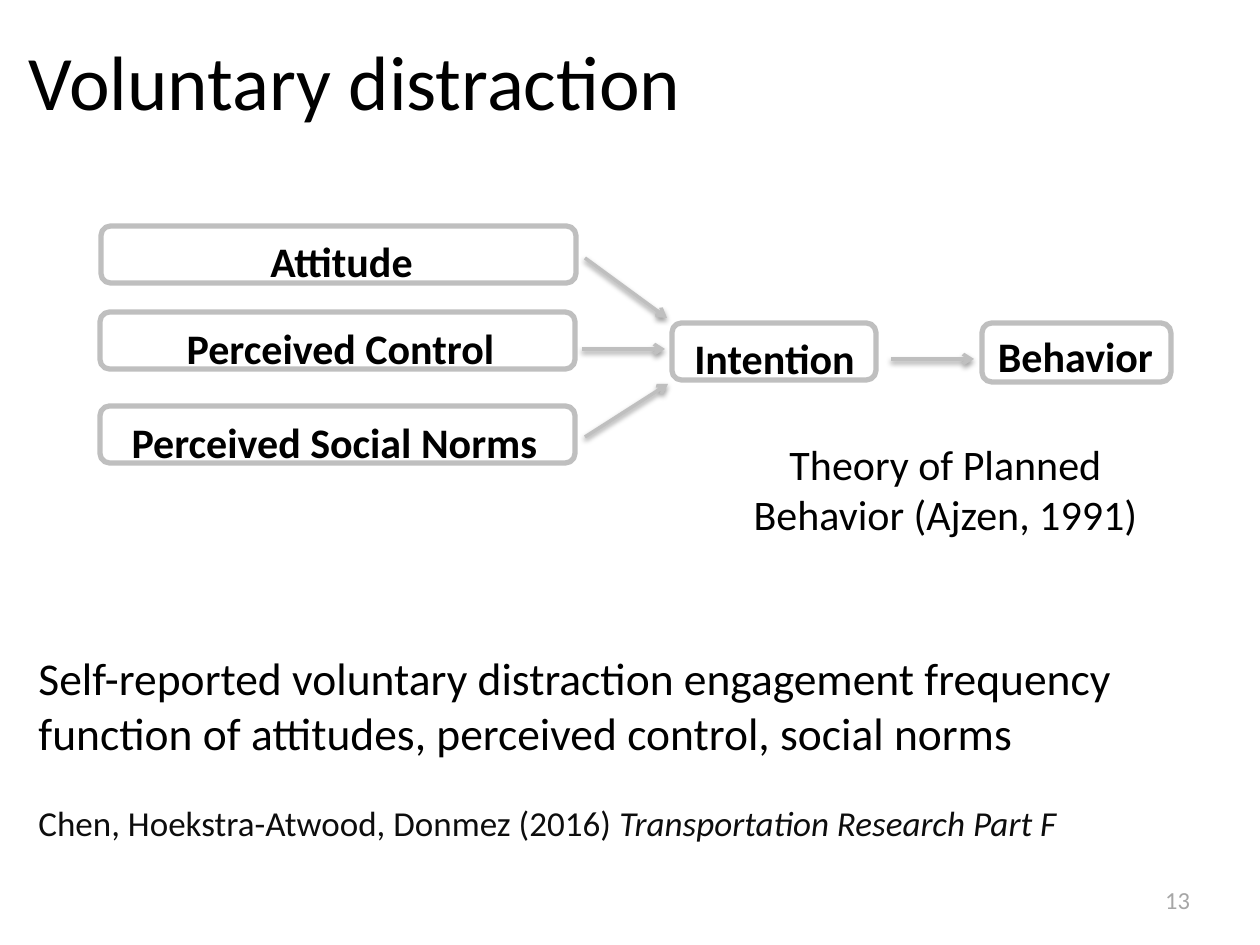
from lxml import etree
from pptx import Presentation
from pptx.dml.color import RGBColor
from pptx.enum.shapes import MSO_CONNECTOR, MSO_SHAPE
from pptx.enum.text import MSO_ANCHOR, PP_ALIGN
from pptx.oxml import parse_xml
from pptx.oxml.ns import nsdecls, qn
from pptx.util import Inches, Pt

ROUNDED = MSO_SHAPE.ROUNDED_RECTANGLE
STRAIGHT = MSO_CONNECTOR.STRAIGHT
MIDDLE = MSO_ANCHOR.MIDDLE
LEFT, CENTER = PP_ALIGN.LEFT, PP_ALIGN.CENTER

BLACK = RGBColor(0x00, 0x00, 0x00)
NEAR_BLACK = RGBColor(0x0D, 0x0D, 0x0D)
GREY = RGBColor(0xBF, 0xBF, 0xBF)
NUMBER_GREY = RGBColor(0xA6, 0xA6, 0xA6)
FONT = "Calibri"
PX = Inches(1) / 126

ARROW_SHADOW = f"""<a:effectLst {nsdecls('a')}>
  <a:outerShdw blurRad="39370" dist="20320" dir="5400000" rotWithShape="0">
    <a:srgbClr val="000000"><a:alpha val="38000"/></a:srgbClr>
  </a:outerShdw>
</a:effectLst>"""


def emu(*lengths):
    return [round(length * PX) for length in lengths]


def add_text(box, text, size, color=BLACK, bold=False, align=CENTER):
    frame = slide.shapes.add_textbox(*emu(*box)).text_frame
    frame.word_wrap = True
    paragraph = frame.paragraphs[0]
    paragraph.text = text
    paragraph.alignment = align
    font = paragraph.font
    font.name, font.size, font.bold = FONT, Pt(size), bold
    font.color.rgb = color
    return frame


prs = Presentation()
prs.slide_width, prs.slide_height = emu(1260, 945)
slide = prs.slides.add_slide(prs.slide_layouts[5])

# Title
title = slide.shapes.title
title.left, title.top, title.width, title.height = emu(16, 1, 1134, 158)
title.text_frame.text = "Voluntary distraction"
title.text_frame.vertical_anchor = MIDDLE
heading = title.text_frame.paragraphs[0]
heading.alignment = LEFT
heading.font.name, heading.font.size = FONT, Pt(44)
heading.font.color.rgb = BLACK

# Slide number
add_text((1100, 879, 155, 66), "13", 14, NUMBER_GREY)

# Finding and citation
finding = add_text(
    (26, 644, 1229, 208),
    "Self-reported voluntary distraction engagement frequency "
    "function of attitudes, perceived control, social norms",
    26, align=LEFT)
citation = finding.add_paragraph()
citation.space_before = Pt(24)
citation.font.name, citation.font.size = FONT, Pt(20)
citation.font.color.rgb = NEAR_BLACK
citation.add_run().text = "Chen, Hoekstra-Atwood, Donmez (2016)\u00a0".replace("\u00a0", " ")
journal = citation.add_run()
journal.text = "Transportation Research Part F"
journal.font.italic = True

# Factors of the model: frame, then label as left, top, width
factors = [
    ("Perceived Control", (100, 312, 475, 57), (111, 316, 459)),
    ("Perceived Social Norms", (100, 406, 475, 57), (101, 410, 467)),
    ("Attitude", (101, 226, 475, 57), (112, 229, 459)),
    ("Intention", (672, 323, 204, 57), (673, 326, 203)),
    ("Behavior", (982, 323, 189, 59), (974, 324, 203)),
]
for factor, frame_box, label_box in factors:
    frame = slide.shapes.add_shape(ROUNDED, *emu(*frame_box))
    frame.shadow.inherit = False
    frame.fill.background()
    frame.line.color.rgb = GREY
    frame.line.width = Pt(3)
    add_text((*label_box, 63), factor, 24, bold=True)

# Arrows between factors
for ends in [(585, 258, 667, 318), (582, 349, 665, 349),
             (585, 437, 668, 384), (891, 359, 974, 359)]:
    arrow = slide.shapes.add_connector(STRAIGHT, *emu(*ends))
    arrow.line.color.rgb = GREY
    arrow.line.width = Pt(2)
    etree.SubElement(arrow.line._get_or_add_ln(), qn("a:tailEnd"), type="arrow")
    arrow._element.spPr.append(parse_xml(ARROW_SHADOW))

# Theory behind the model
add_text((699, 432, 493, 115), "Theory of Planned Behavior (Ajzen, 1991)", 24)

prs.save("out.pptx")
